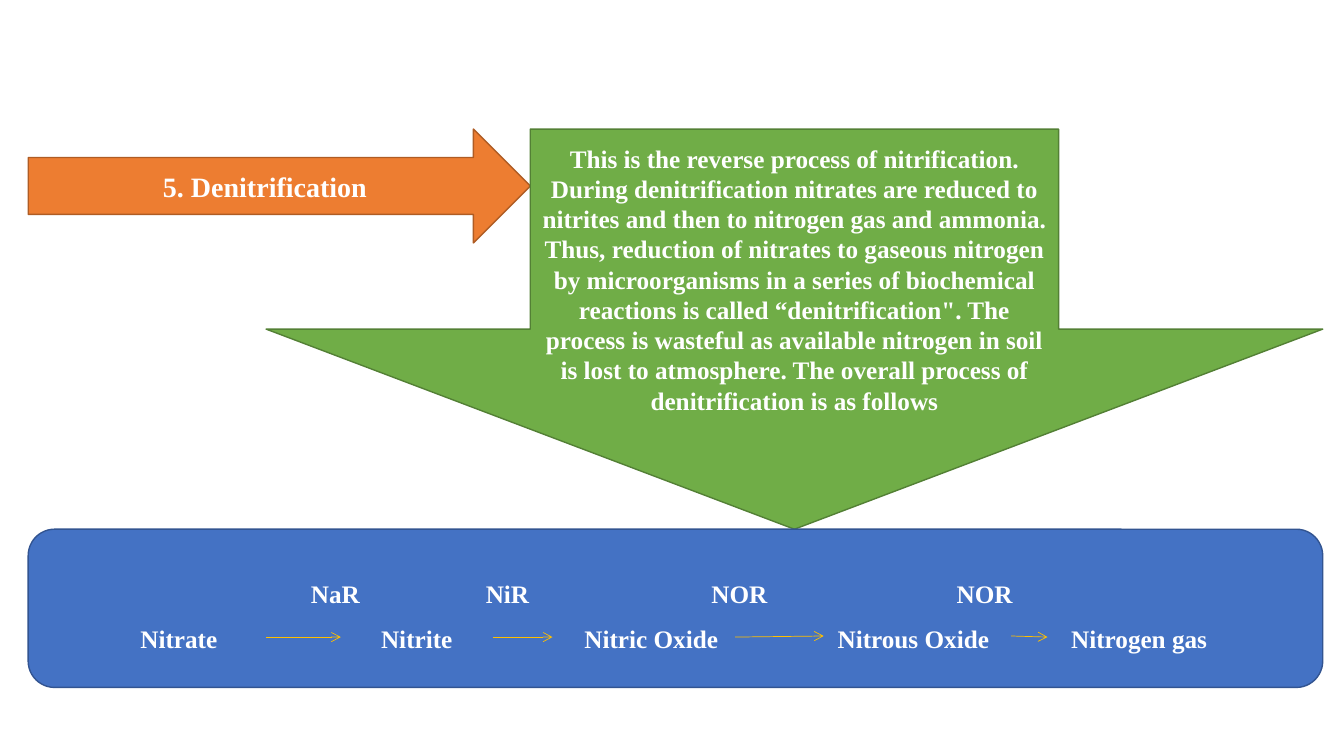
from dataclasses import dataclass

from lxml.etree import SubElement
from pptx import Presentation
from pptx.dml.color import RGBColor
from pptx.enum.shapes import MSO_CONNECTOR, MSO_SHAPE
from pptx.enum.text import MSO_ANCHOR, PP_ALIGN
from pptx.oxml.ns import qn
from pptx.util import Inches, Pt


@dataclass
class Theme:
    font: str = "Times New Roman"
    head: int = 20
    body: int = 18
    text: str = "FFFFFF"
    orange: tuple = ("ED7D31", "AF5C24")
    green: tuple = ("70AD47", "538035")
    blue: tuple = ("4472C4", "325491")
    gold: str = "FFC000"


class Page:
    """Places elements in percent of the slide's width and height."""

    def __init__(self, deck, theme):
        self.deck, self.theme = deck, theme
        self.slide = deck.slides.add_slide(deck.slide_layouts[6])

    def x(self, share):
        return round(self.deck.slide_width * share / 100)

    def y(self, share):
        return round(self.deck.slide_height * share / 100)

    def block(self, kind, left, top, right, foot, paint):
        box = self.slide.shapes.add_shape(
            kind, self.x(left), self.y(top),
            self.x(right - left), self.y(foot - top))
        box.shadow.inherit = False
        box.fill.solid()
        box.fill.fore_color.rgb = RGBColor.from_string(paint[0])
        box.line.color.rgb = RGBColor.from_string(paint[1])
        box.line.width = Pt(1)
        box.text_frame.word_wrap = True
        box.text_frame.vertical_anchor = MSO_ANCHOR.MIDDLE
        return box

    def label(self, box, text, size, align=PP_ALIGN.CENTER):
        box.text_frame.text = text
        for para in box.text_frame.paragraphs:
            para.alignment = align
            for run in para.runs:
                run.font.name = self.theme.font
                run.font.size = Pt(size)
                run.font.bold = True
                run.font.color.rgb = RGBColor.from_string(self.theme.text)

    def rows(self, box, rows, size, inset):
        """Sets one paragraph a row, each name centred on its own tab."""
        lines = ["".join("\t" + name for name, _ in row) for row in rows]
        self.label(box, "\n".join(lines), size, PP_ALIGN.LEFT)
        for para, row in zip(box.text_frame.paragraphs, rows):
            para.line_spacing = 1.5
            tabs = SubElement(para._p.get_or_add_pPr(), qn("a:tabLst"))
            for _, mid in row:
                pos = self.x(mid) - box.left - inset
                SubElement(tabs, qn("a:tab"), pos=str(pos), algn="ctr")

    def arrow(self, start, end, rise, fall):
        line = self.slide.shapes.add_connector(
            MSO_CONNECTOR.STRAIGHT, self.x(start), self.y(rise),
            self.x(end), self.y(fall))
        line.line.color.rgb = RGBColor.from_string(self.theme.gold)
        line.line.width = Pt(0.5)
        props = line._element.spPr
        SubElement(props.find(qn("a:ln")), qn("a:tailEnd"), type="arrow")
        SubElement(props, qn("a:effectLst"))


TITLE = "5. Denitrification"
ABOUT = (
    "This is the reverse process of nitrification. During denitrification "
    "nitrates are reduced to nitrites and then to nitrogen gas and ammonia. "
    "Thus, reduction of nitrates to gaseous nitrogen by microorganisms in a "
    "series of biochemical reactions is called “denitrification\". The "
    "process is wasteful as available nitrogen in soil is lost to "
    "atmosphere. The overall process of denitrification is as follows")

# Names with their centres
ENZYMES = [("NaR", 25), ("NiR", 37.8), ("NOR", 55.06), ("NOR", 73.3)]
STAGES = [("Nitrate", 13.35), ("Nitrite", 31.05), ("Nitric Oxide", 48.5),
          ("Nitrous Oxide", 68), ("Nitrogen gas", 84.8)]

# Arrows: start, end, height at start, height at end
LOW, HIGH = 84.27, 84.13
STEPS = [(19.8, 25.36, LOW, LOW), (36.68, 41.11, LOW, LOW),
         (54.69, 61.29, LOW, HIGH), (75.24, 77.94, HIGH, LOW)]

# Shared edges of the three blocks
LEFT, RIGHT, TOP, BASE = 2.1, 98.42, 17.07, 70


def main():
    deck = Presentation()
    deck.slide_width, deck.slide_height = Inches(13.33), Inches(7.5)
    theme = Theme()
    page = Page(deck, theme)

    # Heading arrow
    head = page.block(MSO_SHAPE.RIGHT_ARROW, LEFT, TOP, 39.46, 32.13,
                      theme.orange)
    page.label(head, TITLE, theme.head)

    # Explanation
    about = page.block(MSO_SHAPE.DOWN_ARROW, 19.8, TOP, RIGHT, BASE,
                       theme.green)
    page.label(about, ABOUT, theme.body)

    # Reaction chain
    chain = page.block(MSO_SHAPE.ROUNDED_RECTANGLE, LEFT, BASE, RIGHT, 90.93,
                       theme.blue)
    page.rows(chain, [ENZYMES, STAGES], theme.body, Inches(0.18))
    for step in STEPS:
        page.arrow(*step)

    deck.save("out.pptx")


if __name__ == "__main__":
    main()
